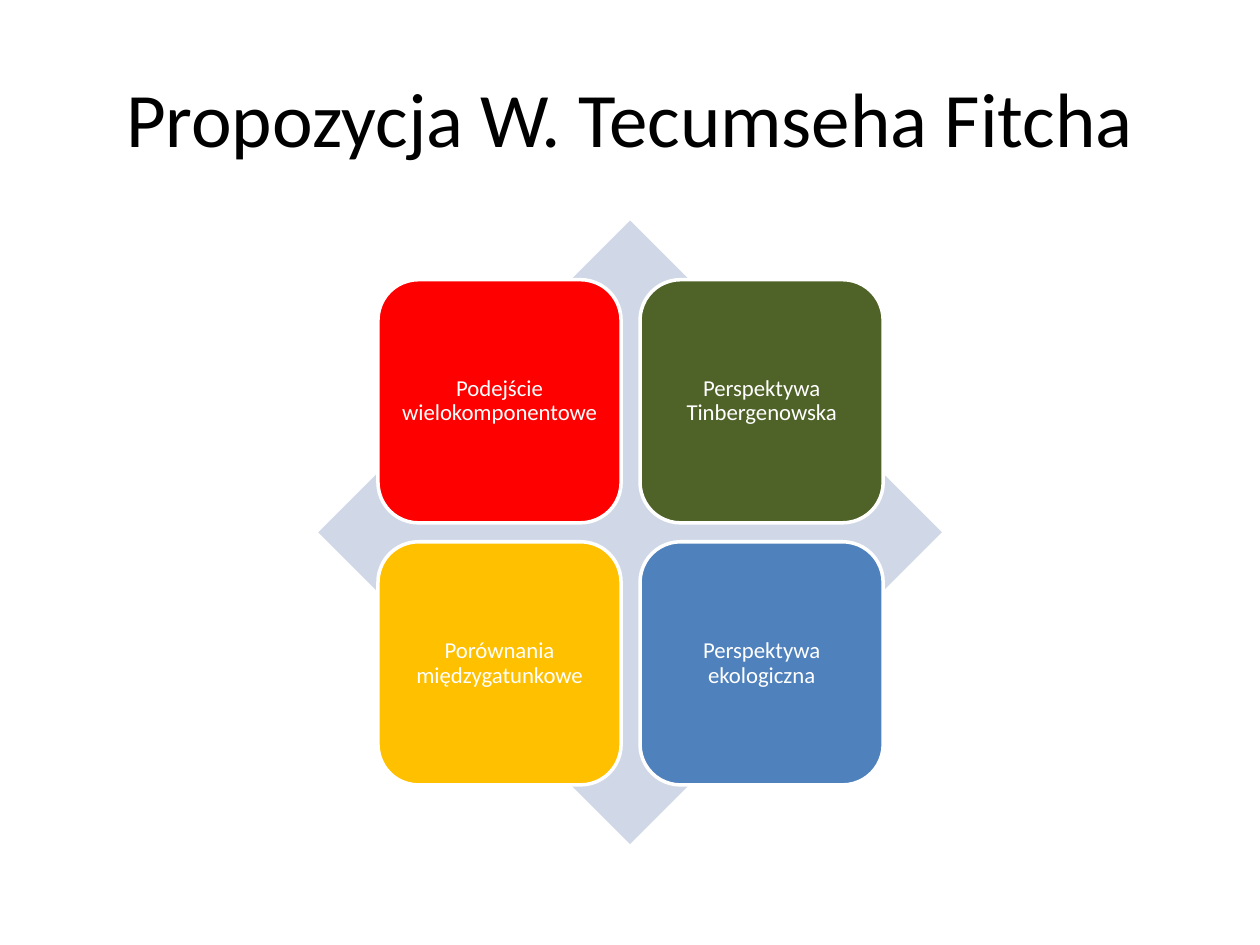
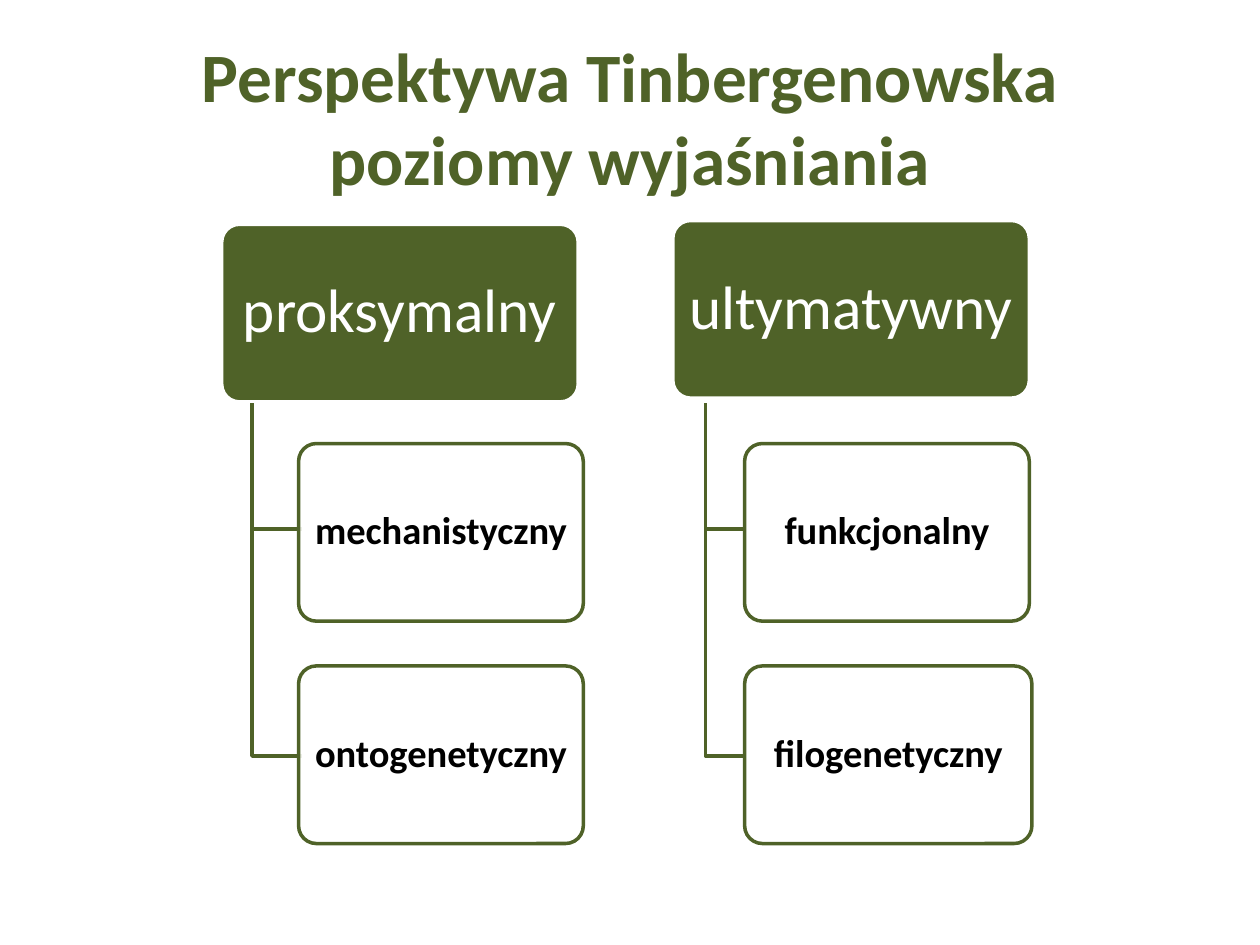
import dataclasses

import pptx
import pptx.dml.color
import pptx.enum.shapes
import pptx.enum.text
import pptx.oxml.ns
import pptx.util
from lxml import etree


@dataclasses.dataclass(frozen=True)
class Theme:
    font: str = "Calibri"
    black: str = "000000"
    white: str = "FFFFFF"
    pale: str = "D0D8E8"
    red: str = "FF0000"
    green: str = "4F6228"
    amber: str = "FFC000"
    blue: str = "4F81BD"
    title: float = 44
    long_title: float = 39.6
    level: float = 35
    sublevel: float = 22
    tile: float = 13
    line: float = 2


theme = Theme()
rgb = pptx.dml.color.RGBColor.from_string
kinds = pptx.enum.shapes.MSO_SHAPE

# The grid has 100 columns and 75 rows of equal size
prs = pptx.Presentation()
prs.slide_width, prs.slide_height = pptx.util.Inches(10), pptx.util.Inches(7.5)
unit = prs.slide_width // 100
title_box = (5, 3, 90, 12.5)


def write(sp, text, size, color, bold=False, inset=None, spacing=None):
    tf = sp.text_frame
    tf.word_wrap = True
    tf.vertical_anchor = pptx.enum.text.MSO_ANCHOR.MIDDLE
    if inset:
        tf.margin_left = tf.margin_right = int(inset[0] * unit)
        tf.margin_top = tf.margin_bottom = int(inset[1] * unit)
    p = tf.paragraphs[0]
    p.text = text
    p.alignment = pptx.enum.text.PP_ALIGN.CENTER
    p.line_spacing = spacing
    for r in p.runs:
        r.font.name, r.font.size, r.font.bold = theme.font, pptx.util.Pt(size), bold
        r.font.color.rgb = rgb(color)


def block(s, kind, at, fill, line=None, corner=None):
    sp = s.shapes.add_shape(kind, *(int(n * unit) for n in at))
    sp.shadow.inherit = False
    sp.fill.solid()
    sp.fill.fore_color.rgb = rgb(fill)
    if line:
        sp.line.color.rgb = rgb(line)
        sp.line.width = pptx.util.Pt(theme.line)
    else:
        sp.line.fill.background()
    if corner:
        sp.adjustments[0] = corner
    return sp


# Slides and their titles
slides = []
for text, size, color, bold in [
    ("Propozycja W. Tecumseha Fitcha", theme.title, theme.black, False),
    ("Perspektywa Tinbergenowska\vpoziomy wyjaśniania", theme.long_title, theme.green, True),
]:
    s = prs.slides.add_slide(prs.slide_layouts[5])
    sp = s.shapes.title
    sp.left, sp.top, sp.width, sp.height = (int(n * unit) for n in title_box)
    write(sp, text, size, color, bold)
    slides.append(s)
matrix, levels = slides

# Slide 1: four tiles on a diamond
block(matrix, kinds.DIAMOND, (25.25, 17.5, 49.5, 49.5), theme.pale)
tile, step = 19.3, 20.8
tiles = [
    ("Podejście wielokomponentowe", theme.red),
    ("Perspektywa Tinbergenowska", theme.green),
    ("Porównania międzygatunkowe", theme.amber),
    ("Perspektywa ekologiczna", theme.blue),
]
for i, (text, fill) in enumerate(tiles):
    row, col = divmod(i, 2)
    at = (30 + col * step, 22.2 + row * step, tile, tile)
    sp = block(matrix, kinds.ROUNDED_RECTANGLE, at, fill, theme.white)
    write(sp, text, theme.tile, theme.white, inset=(0.5, 0.5), spacing=0.9)

# Slide 2: two levels of explanation, each with two kinds below it
head_w, box_h, first_row, row_step = 28.3, 14.1, 35.2, 17.65
branches = [
    # heading, left, top, trunk column, box column, (kind, box width)
    ("proksymalny", 17.6, 17.8, 20.4, 23.7,
     [("mechanistyczny", 22.6), ("ontogenetyczny", 22.6)]),
    ("ultymatywny", 53.4, 17.5, 56.2, 59.1,
     [("funkcjonalny", 22.6), ("filogenetyczny", 22.8)]),
]
for heading, left, top, trunk, box_left, children in branches:
    sp = block(levels, kinds.ROUNDED_RECTANGLE, (left, top, head_w, box_h),
               theme.green, theme.white, 0.1)
    write(sp, heading, theme.level, theme.white, inset=(0.7, 0.5), spacing=0.9)

    for i, (text, width) in enumerate(children):
        box_top = first_row + i * row_step
        middle = box_top + box_h / 2

        # Elbow from the heading to the box
        elbow = levels.shapes.build_freeform(trunk, top + box_h, scale=unit)
        elbow.add_line_segments([(trunk, middle), (box_left, middle)], close=False)
        sp = elbow.convert_to_shape()
        sp.shadow.inherit = False
        sp.fill.background()
        sp.line.color.rgb = rgb(theme.green)
        sp.line.width = pptx.util.Pt(theme.line)

        # Box with a slightly transparent fill
        sp = block(levels, kinds.ROUNDED_RECTANGLE, (box_left, box_top, width, box_h),
                   theme.white, theme.green, 0.1)
        color = sp.fill._xPr.find(".//" + pptx.oxml.ns.qn("a:srgbClr"))
        etree.SubElement(color, pptx.oxml.ns.qn("a:alpha"), val="90000")
        write(sp, text, theme.sublevel, theme.black, True, inset=(0.5, 0.3), spacing=0.9)

prs.save("out.pptx")
